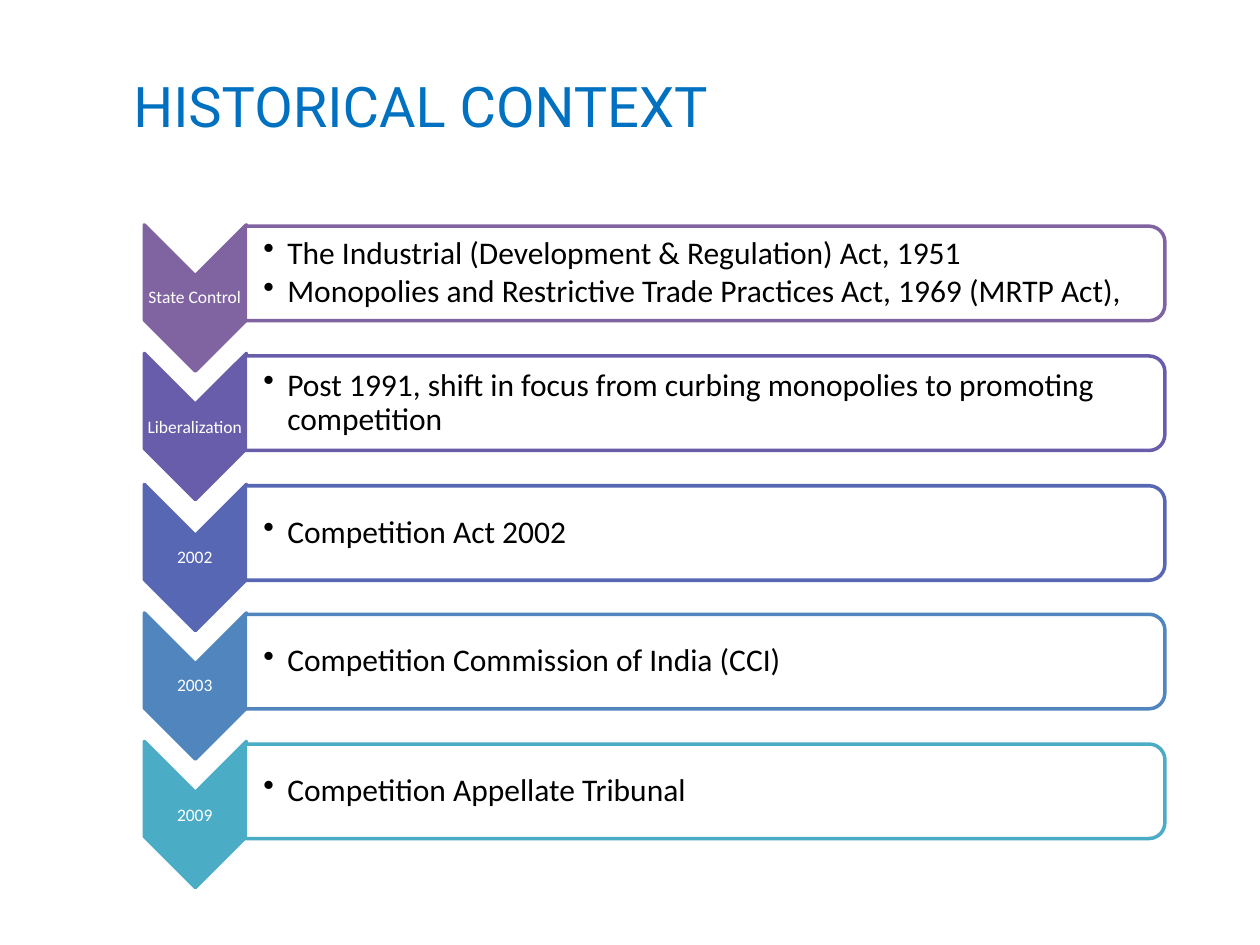
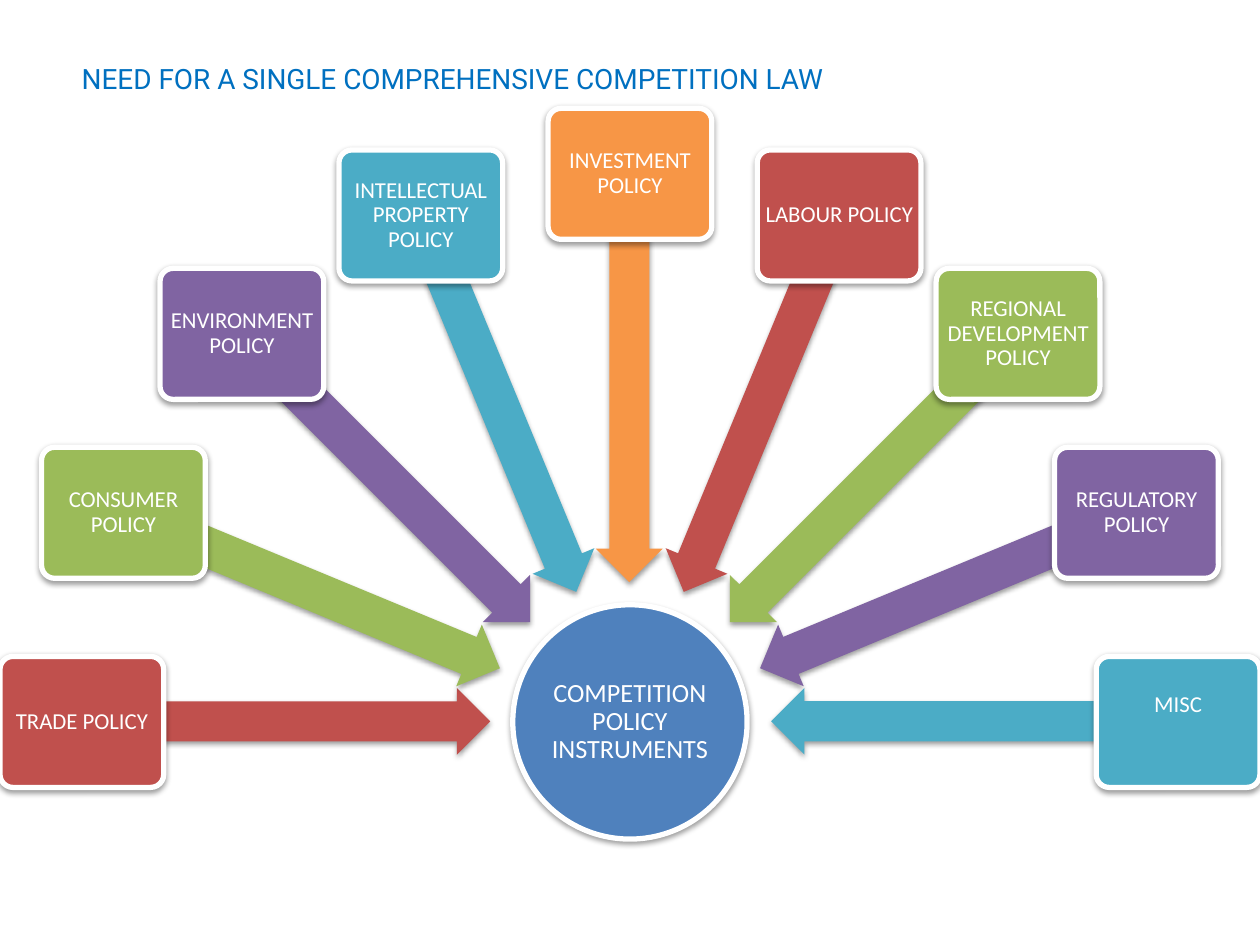
import math
from dataclasses import dataclass

import lxml.etree
import pptx
import pptx.dml.color
import pptx.enum.shapes
import pptx.enum.text
import pptx.oxml.ns
import pptx.util

PX = 9144  # 100 px to the inch
BLUE, WHITE, BLACK = "0070C0", "FFFFFF", "000000"
RED, GREEN, PURPLE = "C0504D", "9BBB59", "8064A2"
TEAL, ORANGE, HUB = "4BACC6", "F79646", "4F81BD"

FORM = pptx.enum.shapes.MSO_SHAPE
ALIGN = pptx.enum.text.PP_ALIGN
MID = pptx.enum.text.MSO_ANCHOR.MIDDLE


@dataclass
class Box:
    x: int
    y: int
    w: int
    h: int

    def emu(self) -> tuple:
        return tuple(n * PX for n in (self.x, self.y, self.w, self.h))


@dataclass
class Era:
    name: str
    color: str
    notes: tuple


@dataclass
class Policy:
    name: str
    color: str
    foot: int = 3


ERAS = (
    Era("State Control", PURPLE, (
        "The Industrial (Development & Regulation) Act, 1951",
        "Monopolies and Restrictive Trade Practices Act, 1969 (MRTP Act),")),
    Era("Liberalization", "685DAB", (
        "Post 1991, shift in focus from curbing monopolies to promoting competition",)),
    Era("2002", "5767B4", ("Competition Act 2002",)),
    Era("2003", "5185BD", ("Competition Commission of India (CCI)",)),
    Era("2009", TEAL, ("Competition Appellate Tribunal",)),
)

POLICIES = (
    Policy("TRADE POLICY", RED),
    Policy("CONSUMER POLICY", GREEN),
    Policy("ENVIRONMENT POLICY", PURPLE),
    Policy("INTELLECTUAL PROPERTY POLICY", TEAL),
    Policy("INVESTMENT POLICY", ORANGE),
    Policy("LABOUR POLICY", RED),
    Policy("REGIONAL DEVELOPMENT POLICY", GREEN),
    Policy("REGULATORY POLICY", PURPLE),
    Policy("MISC", TEAL, foot=29),
)


def rgb(code: str) -> pptx.dml.color.RGBColor:
    return pptx.dml.color.RGBColor.from_string(code)


def child(node, tag: str, **attrs):
    return lxml.etree.SubElement(node, pptx.oxml.ns.qn(tag), attrs)


def around(x: float, y: float, w: int, h: int) -> Box:
    """Return the box of the given size centred on a point."""
    return Box(round(x - w / 2), round(y - h / 2), w, h)


def draw(slide, form, box: Box, fill: str, edge: str = "", wide: int = 2, turn: float = 0):
    shape = slide.shapes.add_shape(form, *box.emu())
    shape.shadow.inherit = False
    shape.rotation = turn
    shape.fill.solid()
    shape.fill.fore_color.rgb = rgb(fill)
    if edge:
        shape.line.color.rgb = rgb(edge)
        shape.line.width = pptx.util.Pt(wide)
    else:
        shape.line.fill.background()
    return shape


def shade(shape) -> None:
    """Give the shape a soft shadow straight below it."""
    glow = shape.element.spPr.find(pptx.oxml.ns.qn("a:effectLst"))
    cast = child(glow, "a:outerShdw", blurRad="40000", dist="20000",
                 dir="5400000", rotWithShape="0")
    child(child(cast, "a:srgbClr", val=BLACK), "a:alpha", val="38000")


def pad(frame, left: int, top: int, right: int, foot: int) -> None:
    frame.word_wrap = True
    frame.vertical_anchor = MID
    frame.margin_left, frame.margin_top = left * PX, top * PX
    frame.margin_right, frame.margin_bottom = right * PX, foot * PX


def style(para, text: str, size: int, color: str, face: str = "Calibri") -> None:
    para.text = text
    para.font.size = pptx.util.Pt(size)
    para.font.name = face
    para.font.color.rgb = rgb(color)


def label(frame, text: str, size: int) -> None:
    para = frame.paragraphs[0]
    style(para, text, size, WHITE)
    para.alignment = ALIGN.CENTER
    para.line_spacing = 0.9


def title(slide, text: str, box: Box, size: int) -> None:
    frame = slide.shapes.add_textbox(*box.emu()).text_frame
    frame.word_wrap = True
    style(frame.paragraphs[0], text, size, BLUE, "Roboto")


def bullets(frame, notes: tuple) -> None:
    for i, note in enumerate(notes):
        para = frame.add_paragraph() if i else frame.paragraphs[0]
        style(para, note, 18, BLACK)
        para.line_spacing = 0.9
        para.space_after = pptx.util.Pt(2.7)
        props = para._p.get_or_add_pPr()
        props.set("marL", str(19 * PX))
        props.set("indent", str(-19 * PX))
        mark = child(props, "a:buChar", char="•")
        props.insert_element_before(mark, "a:tabLst", "a:defRPr", "a:extLst")


def era_row(slide, era: Era, top: int) -> None:
    """Draw a down chevron with its name, then the bar with its notes."""
    draw(slide, FORM.CHEVRON, around(155, top + 57, 116, 81), era.color, era.color, turn=90)
    name = slide.shapes.add_textbox(*Box(114, top + 40, 81, 35).emu()).text_frame
    pad(name, 1, 1, 1, 1)
    label(name, era.name, 10)

    bar = draw(slide, FORM.ROUND_2_SAME_RECTANGLE, around(560, top + 38, 75, 730),
               WHITE, era.color, turn=90)
    tint = next(bar.element.spPr.iter(pptx.oxml.ns.qn("a:srgbClr")))
    child(tint, "a:alpha", val="90000")
    notes = slide.shapes.add_textbox(*Box(195, top + 4, 726, 68).emu()).text_frame
    pad(notes, 14, 1, 1, 1)
    bullets(notes, era.notes)


def history(slide) -> None:
    title(slide, "HISTORICAL CONTEXT", Box(96, 52, 782, 64), 32)
    for i, era in enumerate(ERAS):
        era_row(slide, era, 179 + round(102.75 * i))


def wheel(slide) -> None:
    """Draw the hub and a half circle of policy cards pointing at it."""
    mid_x, mid_y = 500, 573
    hub = draw(slide, FORM.OVAL, around(mid_x, mid_y, 186, 186), HUB, WHITE, 3)
    shade(hub)
    pad(hub.text_frame, 1, 1, 1, 1)
    label(hub.text_frame, "COMPETITION POLICY INSTRUMENTS", 15)

    step = 180 / (len(POLICIES) - 1)
    for i, item in enumerate(POLICIES):
        turn = 180 + i * step
        cos, sin = math.cos(math.radians(turn)), math.sin(math.radians(turn))
        arrow = draw(slide, FORM.LEFT_ARROW,
                     around(mid_x + 273 * cos, mid_y + 273 * sin, 323, 53),
                     item.color, turn=turn % 360)
        arrow.adjustments[0] = 0.6
        shade(arrow)
        card = draw(slide, FORM.ROUNDED_RECTANGLE,
                    around(mid_x + 435 * cos, mid_y + 435 * sin, 130, 104),
                    item.color, WHITE, 3)
        card.adjustments[0] = 0.1
        shade(card)
        pad(card.text_frame, 3, 3, 3, item.foot)
        label(card.text_frame, item.name, 13)
    title(slide, "NEED FOR A SINGLE COMPREHENSIVE COMPETITION LAW", Box(55, 44, 945, 37), 16)


def main() -> None:
    deck = pptx.Presentation()
    deck.slide_width, deck.slide_height = 1000 * PX, 750 * PX
    for build in (history, wheel):
        build(deck.slides.add_slide(deck.slide_layouts[6]))
    deck.save("out.pptx")


if __name__ == "__main__":
    main()
